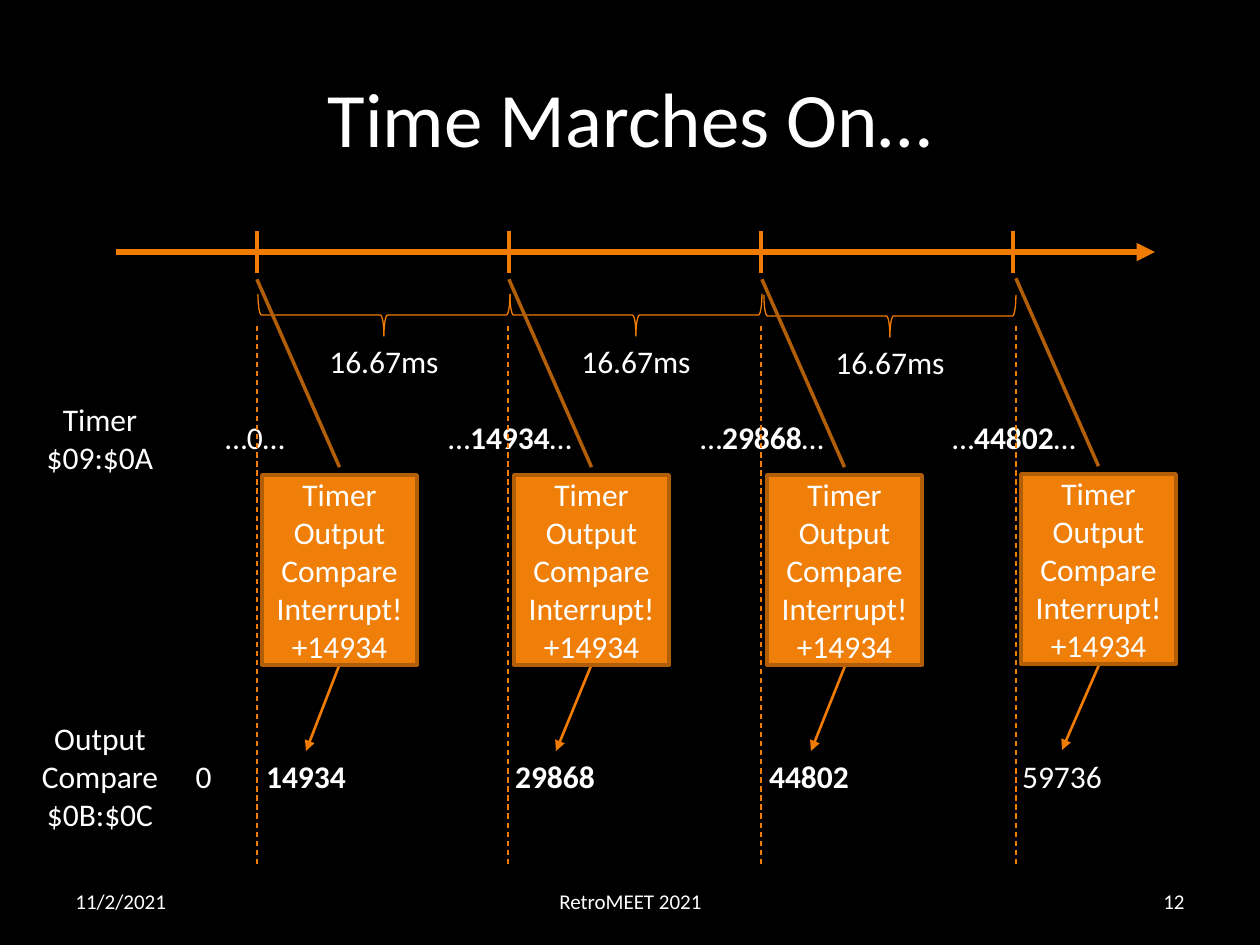
from lxml import etree
from pptx import Presentation
from pptx.dml.color import RGBColor
from pptx.enum.dml import MSO_LINE
from pptx.enum.shapes import MSO_CONNECTOR, MSO_SHAPE
from pptx.enum.text import MSO_ANCHOR, PP_ALIGN
from pptx.oxml.ns import qn
from pptx.util import Emu, Pt

# Content
TITLE = "Time Marches On…"
FOOTERS = [
    ("11/2/2021", (63, 876, 294, 50), PP_ALIGN.LEFT),
    ("RetroMEET 2021", (431, 876, 399, 50), PP_ALIGN.CENTER),
    ("12", (903, 876, 294, 50), PP_ALIGN.RIGHT),
]
ROW_LABELS = [
    (["Timer\n$09:$0A"], (21, 394, 158, 89)),
    (["Output Compare", "$0B:$0C"], (21, 713, 158, 127)),
    (["0"], (176, 751, 55, 50)),
]
PERIOD = "16.67ms"
CALLOUT = "Timer Output Compare Interrupt!\n+14934"
# One entry per timer tick; positions are in px
TICKS = [
    {"timer": "0", "timer_left": 176, "timer_bold": False,
     "next": "14934", "next_left": 227, "next_bold": True,
     "guide": 257, "callout": (262, 475), "arrow": (339, 306)},
    {"timer": "14934", "timer_left": 431, "timer_bold": True,
     "next": "29868", "next_left": 476, "next_bold": True,
     "guide": 508, "callout": (514, 475), "arrow": (591, 556)},
    {"timer": "29868", "timer_left": 683, "timer_bold": True,
     "next": "44802", "next_left": 730, "next_bold": True,
     "guide": 761, "callout": (767, 475), "arrow": (845, 811)},
    {"timer": "44802", "timer_left": 935, "timer_bold": True,
     "next": "59736", "next_left": 983, "next_bold": False,
     "guide": 1016, "callout": (1021, 474), "arrow": (1099, 1062)},
]
BRACES = [(363, 189), (615, 189), (869, 190)]

COLORS = {"back": "000000", "text": "FFFFFF", "line": "F07C03",
          "fill": "F07F09", "edge": "B25E07"}
FIRST_TICK, TICK_GAP = 257, 252
LABEL_WIDTH, LABEL_HEIGHT = 158, 50
BRACE_WIDTH, BRACE_LENGTH = 42, 252
CALLOUT_WIDTH, CALLOUT_HEIGHT = 155, 190
CALLOUT_ADJUSTMENTS = (-0.041, 0.5, -1.03, -0.033)


def px(value):
    return Emu(round(value * 914400 / 126))


def color(name):
    return RGBColor.from_string(COLORS[name])


def write(frame, paragraphs, size=18, align=PP_ALIGN.CENTER, anchor=MSO_ANCHOR.TOP):
    """Each paragraph is a list of (text, bold) spans; a newline is a line break."""
    frame.word_wrap = True
    frame.vertical_anchor = anchor
    for index, spans in enumerate(paragraphs):
        para = frame.paragraphs[0] if index == 0 else frame.add_paragraph()
        para.alignment = align
        for text, bold in spans:
            for number, line in enumerate(text.split("\n")):
                if number:
                    para.add_line_break()
                span = para.add_run()
                span.text = line
                formats = {"name": "Calibri", "size": Pt(size), "bold": bold}
                for key, value in formats.items():
                    setattr(span.font, key, value)
                span.font.color.rgb = color("text")


def add_text(page, place, paragraphs, **formats):
    box = page.shapes.add_textbox(*map(px, place))
    write(box.text_frame, paragraphs, **formats)


def add_line(page, start, end, width, dashed=False, arrow=False):
    connector = page.shapes.add_connector(
        MSO_CONNECTOR.STRAIGHT, *map(px, (*start, *end)))
    connector.line.color.rgb = color("line")
    connector.line.width = Pt(width)
    if dashed:
        connector.line.dash_style = MSO_LINE.DASH
    if arrow:
        etree.SubElement(connector.line._get_or_add_ln(), qn("a:tailEnd"), type="triangle")
    etree.SubElement(connector._element.spPr, qn("a:effectLst"))


def add_outlined(page, kind, place, line, width):
    shape = page.shapes.add_shape(kind, *map(px, place))
    shape.shadow.inherit = False
    shape.line.color.rgb = color(line)
    shape.line.width = Pt(width)
    return shape


def add_brace(page, left, top):
    brace = add_outlined(page, MSO_SHAPE.LEFT_BRACE,
                         (left, top, BRACE_WIDTH, BRACE_LENGTH), "line", 0.75)
    brace.fill.background()
    brace.rotation = 270
    label_left = left + (BRACE_WIDTH - LABEL_WIDTH) / 2
    add_text(page, (label_left, top + 147, LABEL_WIDTH, LABEL_HEIGHT), [[(PERIOD, False)]])


def add_callout(page, left, top):
    callout = add_outlined(page, MSO_SHAPE.LINE_CALLOUT_1,
                           (left, top, CALLOUT_WIDTH, CALLOUT_HEIGHT), "edge", 2)
    callout.fill.solid()
    callout.fill.fore_color.rgb = color("fill")
    for index, value in enumerate(CALLOUT_ADJUSTMENTS):
        callout.adjustments[index] = value
    write(callout.text_frame, [[(CALLOUT, False)]], anchor=MSO_ANCHOR.MIDDLE)


def main():
    deck = Presentation()
    deck.slide_width, deck.slide_height = px(1260), px(945)
    page = deck.slides.add_slide(deck.slide_layouts[6])
    page.background.fill.solid()
    page.background.fill.fore_color.rgb = color("back")

    # Title and footer
    add_text(page, (63, 38, 1134, 158), [[(TITLE, False)]],
             size=44, anchor=MSO_ANCHOR.MIDDLE)
    for text, place, align in FOOTERS:
        add_text(page, place, [[(text, False)]],
                 size=12, align=align, anchor=MSO_ANCHOR.MIDDLE)

    # Time axis with its ticks and periods
    add_line(page, (116, 252), (1155, 252), 3.5, arrow=True)
    for index in range(len(TICKS)):
        x = FIRST_TICK + index * TICK_GAP
        add_line(page, (x, 231), (x, 273), 2)
    for left, top in BRACES:
        add_brace(page, left, top)

    # Row labels
    for paragraphs, place in ROW_LABELS:
        add_text(page, place, [[(text, False)] for text in paragraphs])

    # Timer value, interrupt and next compare value at each tick
    for tick in TICKS:
        add_text(page, (tick["timer_left"], 412, LABEL_WIDTH, LABEL_HEIGHT),
                 [[("…", False), (tick["timer"], tick["timer_bold"]), ("…", False)]])
        add_text(page, (tick["next_left"], 751, LABEL_WIDTH, LABEL_HEIGHT),
                 [[(tick["next"], tick["next_bold"])]])
        left, top = tick["callout"]
        start, end = tick["arrow"]
        add_line(page, (start, top + 191), (end, top + 276), 1.5, arrow=True)
        add_callout(page, left, top)

    # Dashed guides
    for tick in TICKS:
        add_line(page, (tick["guide"], 326), (tick["guide"], 867), 0.75, dashed=True)

    deck.save("out.pptx")


if __name__ == "__main__":
    main()
